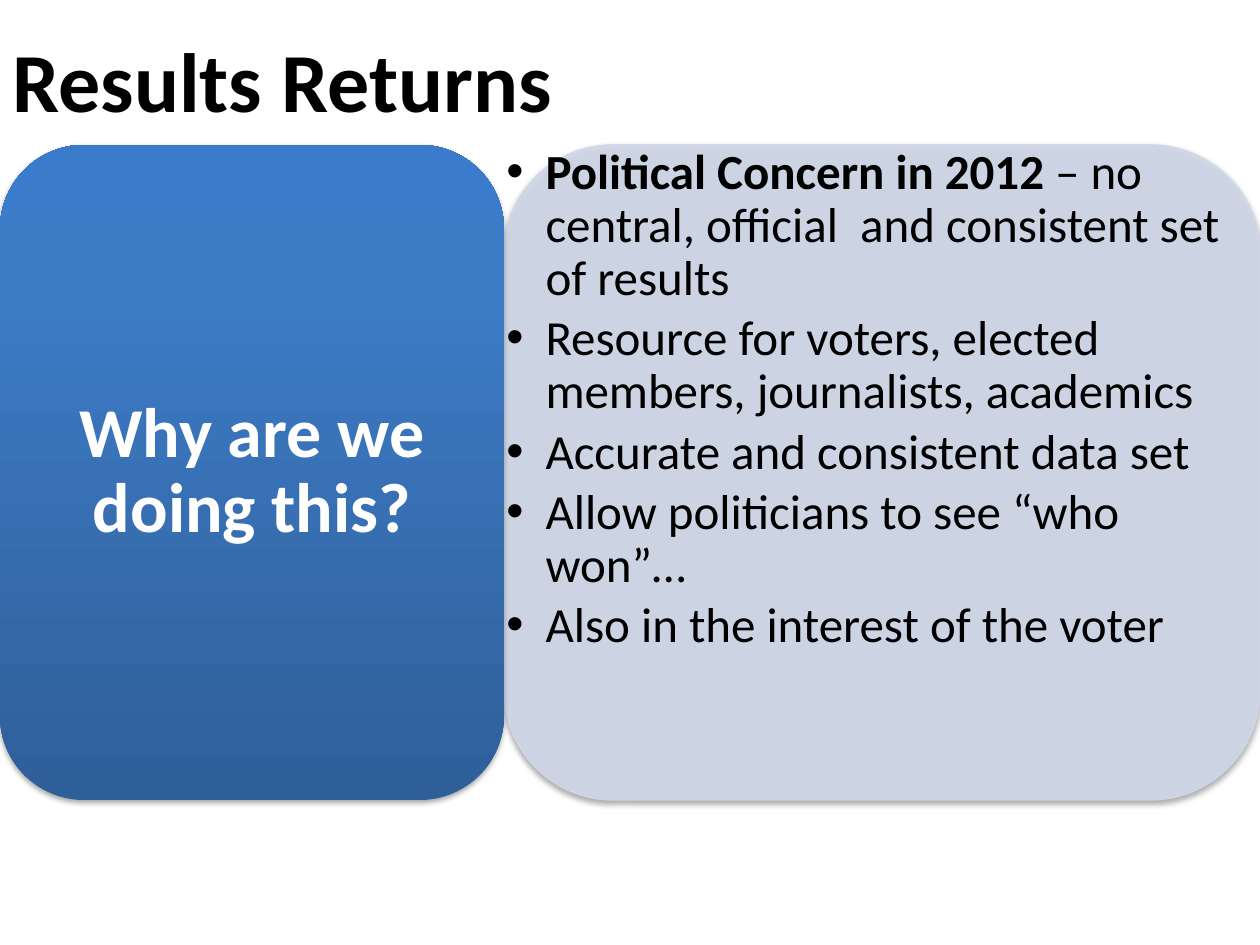
from copy import deepcopy

from pptx import Presentation
from pptx import util as u
from pptx.dml.color import RGBColor
from pptx.enum import shapes, text
from pptx.oxml.ns import qn
from lxml import etree

BULLETS = [
    [("Political Concern in 2012 ", True),
     ("– no central, official  and consistent set of results", False)],
    [("Resource for voters, elected members, journalists, academics", False)],
    [("Accurate and consistent data set", False)],
    [("Allow politicians to see “who won”…", False)],
    [("Also in the interest of the voter", False)],
]


def rgb(value):
    return RGBColor.from_string(value)


def sub(parent, tag, **attrs):
    """Append an XML child; attribute values are turned into strings."""
    child = etree.SubElement(parent, qn(tag))
    for name, value in attrs.items():
        child.set(name, str(value))
    return child


class Deck:
    """Holds the style and the current slide; boxes are in grid columns and rows."""
    FONT = "Calibri"
    COLUMNS, ROWS = 10, 150  # columns of 1 in, rows of 0.05 in

    def __init__(self):
        self.prs = Presentation()
        self.prs.slide_width, self.prs.slide_height = u.Inches(10), u.Inches(7.5)
        self.slide = self.prs.slides.add_slide(self.prs.slide_layouts[5])

    def box(self, col, row, cols, rows):
        dx = self.prs.slide_width / self.COLUMNS
        dy = self.prs.slide_height / self.ROWS
        return [u.Emu(round(n)) for n in (col * dx, row * dy, cols * dx, rows * dy)]

    def style(self, p, size, color, bold=None):
        p.font.name, p.font.size, p.font.bold = self.FONT, u.Pt(size), bold
        p.font.color.rgb = rgb(color)

    def title(self, words, cells):
        sp = self.slide.shapes.title
        sp.left, sp.top, sp.width, sp.height = self.box(*cells)
        tf = sp.text_frame
        tf.text = words
        tf.vertical_anchor = text.MSO_ANCHOR.MIDDLE
        p = tf.paragraphs[0]
        p.alignment = text.PP_ALIGN.LEFT
        self.style(p, 48, "000000", True)

    def panel(self, cells):
        """Rounded rectangle with a soft shadow; fill is left to the caller."""
        sp = self.slide.shapes.add_shape(
            shapes.MSO_SHAPE.ROUNDED_RECTANGLE, *self.box(*cells))
        sp.shadow.inherit = False
        effects = sp._element.spPr.find(qn("a:effectLst"))
        shadow = sub(effects, "a:outerShdw", blurRad=u.Pt(3.1), dist=u.Pt(1.8),
                     dir=90 * 60000, rotWithShape=0)
        sub(sub(shadow, "a:srgbClr", val="000000"), "a:alpha", val=35000)
        return sp

    def tinted_panel(self, cells, color, opacity):
        sp = self.panel(cells)
        sp.line.width = u.Pt(0.75)
        for fill in (sp.fill, sp.line.fill):
            fill.solid()
            fill.fore_color.rgb = rgb(color)
        for clr in sp._element.spPr.iter(qn("a:srgbClr")):
            if clr.get("val") == color:
                sub(clr, "a:alpha", val=opacity * 1000)

    def gradient_panel(self, cells, stops):
        """Gradient running from the bottom upwards."""
        sp = self.panel(cells)
        sp.line.fill.background()
        sp.fill.gradient()
        sp.fill.gradient_angle = 90
        stop_list = next(sp._element.spPr.iter(qn("a:gsLst")))
        stop_list.append(deepcopy(stop_list[0]))
        for stop, (position, color) in zip(sp.fill.gradient_stops, stops):
            stop.position = position
            stop.color.rgb = rgb(color)

    def text_box(self, cells, inset_x, inset_y, anchor):
        tf = self.slide.shapes.add_textbox(*self.box(*cells)).text_frame
        tf.word_wrap = True
        tf.vertical_anchor = anchor
        tf.margin_left = tf.margin_right = u.Inches(inset_x)
        tf.margin_top = tf.margin_bottom = u.Inches(inset_y)
        return tf

    def heading(self, words, cells):
        tf = self.text_box(cells, 0.17, 0.08, text.MSO_ANCHOR.MIDDLE)
        p = tf.paragraphs[0]
        p.text = words
        p.alignment = text.PP_ALIGN.CENTER
        p.line_spacing, p.space_after = 0.9, u.Pt(14)
        self.style(p, 40, "FFFFFF", True)

    def bullets(self, items, cells):
        tf = self.text_box(cells, 0.02, 0.02, text.MSO_ANCHOR.TOP)
        for i, runs in enumerate(items):
            p = tf.add_paragraph() if i else tf.paragraphs[0]
            p.level = 1
            p.line_spacing, p.space_after = 0.9, u.Pt(4.2)
            pPr = p._p.get_or_add_pPr()
            pPr.set("marL", str(u.Inches(0.31)))
            pPr.set("indent", str(u.Inches(-0.31)))
            sub(pPr, "a:buFont", typeface="Arial")
            sub(pPr, "a:buChar", char="•")
            self.style(p, 28, "000000")
            for words, bold in runs:
                r = p.add_run()
                r.text, r.font.bold = words, bold


def main():
    deck = Deck()
    question, answers = (0, 23, 4, 104), (4, 23, 6, 104)
    deck.title("Results Returns", (0, 0, 9, 25))
    deck.tinted_panel(answers, "D0D8E8", 90)
    deck.bullets(BULLETS, answers)
    deck.gradient_panel(question, [(0, "2F5F99"), (0.8, "3D7CC7"), (1, "3A7CCB")])
    deck.heading("Why are we doing this?", question)
    deck.prs.save("out.pptx")


if __name__ == "__main__":
    main()
